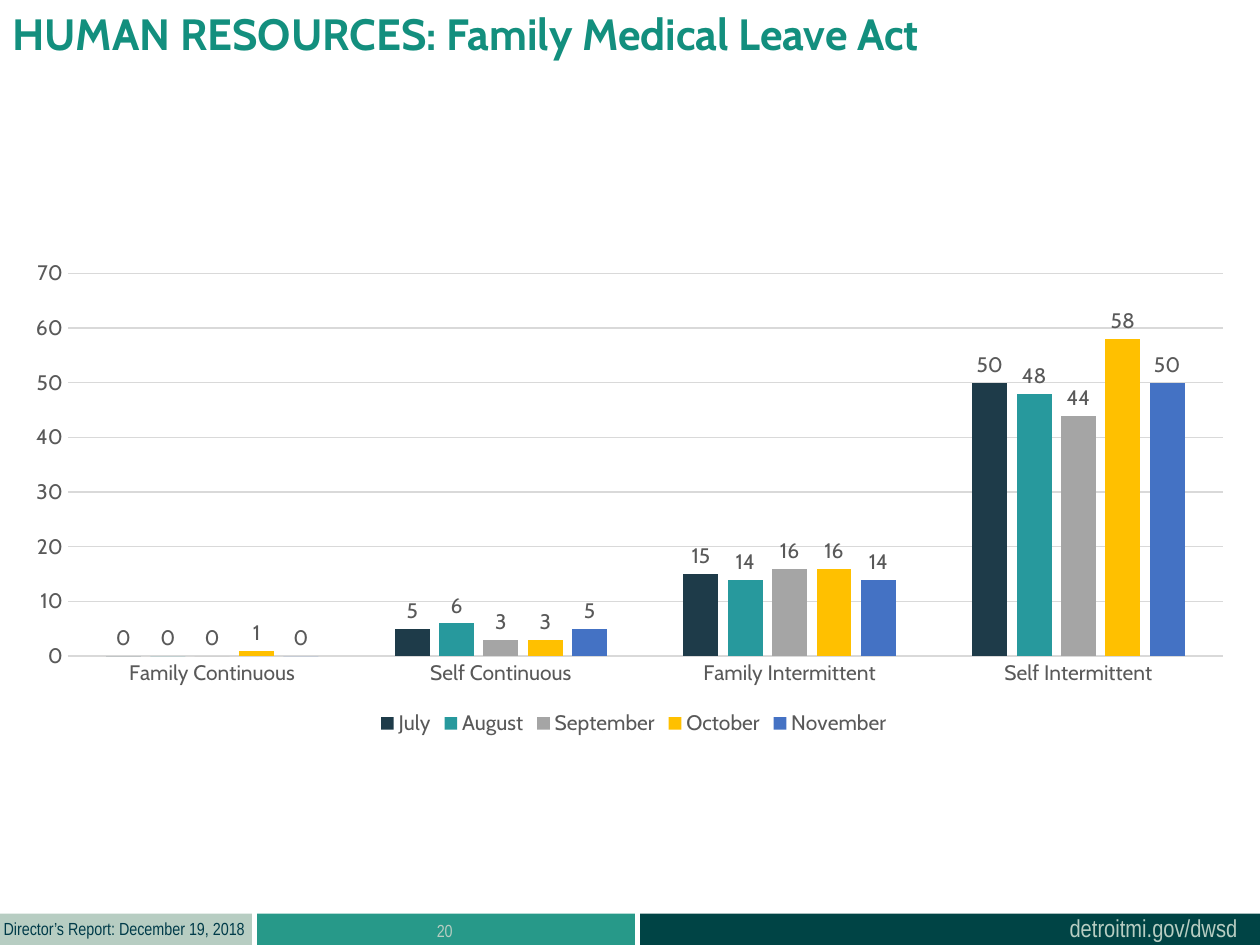
import pptx
import pptx.chart.data
import pptx.dml.color
import pptx.enum.chart
import pptx.enum.shapes
import pptx.enum.text
import pptx.oxml
import pptx.oxml.ns
import pptx.util

WIDTH, HEIGHT = 10, 7.5
HEADING = "HUMAN RESOURCES: Family Medical Leave Act"
LEAVE_TYPES = ["Family Continuous", "Self Continuous", "Family Intermittent", "Self Intermittent"]
MONTHS = [  # name, cases by leave type, colour
    ("July", (0, 5, 15, 50), "1E3B49"),
    ("August", (0, 6, 14, 48), "27999D"),
    ("September", (0, 3, 16, 44), "A5A5A5"),
    ("October", (1, 3, 16, 58), "FFC000"),
    ("November", (0, 5, 14, 50), "4472C4"),
]
BAND_HEIGHT = HEIGHT / 30
BAND_TOP = HEIGHT - BAND_HEIGHT
FOOTER_BANDS = [(0, 2, "B7CDC2"), (2.04, 3, "279989"), (5.08, WIDTH - 5.08, "004445")]
FOOTER_TEXTS = [  # text, place, format
    ("Director’s Report: December 19, 2018", (-0.07, 7.24, 2.19, 0.27),
     dict(size=10, color="003B49")),
    ("20", (2.03, BAND_TOP, 3, 0.25),
     dict(size=10, color="B7CDC2", align=pptx.enum.text.PP_ALIGN.CENTER)),
    ("detroitmi.gov/dwsd", (8.39, 7.2, 1.55, 0.34),
     dict(size=14, color="B7CDC2", wrap=False)),
]
PLOT_AREA = {"x": 0.035, "y": 0.039, "w": 0.949, "h": 0.787}  # shares of the chart


def rgb(color):
    return pptx.dml.color.RGBColor.from_string(color)


def inches(*lengths):
    return [pptx.util.Inches(length) for length in lengths]


def style_font(font, size, color, name, bold=False):
    font.size = pptx.util.Pt(size)
    font.color.rgb = rgb(color)
    font.name = name
    font.bold = bold


def write(box, text, size, color, font="Arial Narrow", bold=False,
          align=pptx.enum.text.PP_ALIGN.LEFT, wrap=True):
    frame = box.text_frame
    frame.text = text
    frame.word_wrap = wrap
    frame.auto_size = pptx.enum.text.MSO_AUTO_SIZE.NONE
    frame.vertical_anchor = pptx.enum.text.MSO_ANCHOR.TOP
    frame.paragraphs[0].alignment = align
    style_font(frame.paragraphs[0].runs[0].font, size, color, font, bold)


def style_chart_text(font):
    style_font(font, 12, "595959", "Cabin")


def style_line(line, color="D9D9D9"):
    line.color.rgb = rgb(color)
    line.width = pptx.util.Pt(0.75)


def add_footer(slide):
    for left, width, color in FOOTER_BANDS:
        band = slide.shapes.add_shape(pptx.enum.shapes.MSO_SHAPE.RECTANGLE,
                                      *inches(left, BAND_TOP, width, BAND_HEIGHT))
        band.shadow.inherit = False
        band.fill.solid()
        band.fill.fore_color.rgb = rgb(color)
        band.line.fill.background()
    for text, place, style in FOOTER_TEXTS:
        write(slide.shapes.add_textbox(*inches(*place)), text, **style)


def place_plot(chart):
    plot_area = chart.plots[0]._element.getparent()
    for old in plot_area.findall(pptx.oxml.ns.qn("c:layout")):
        plot_area.remove(old)
    modes = "".join(f'<c:{side}Mode val="edge"/>' for side in "xy")
    shares = "".join(f'<c:{side} val="{share}"/>' for side, share in PLOT_AREA.items())
    plot_area.insert(0, pptx.oxml.parse_xml(
        f'<c:layout {pptx.oxml.ns.nsdecls("c")}><c:manualLayout>'
        f'<c:layoutTarget val="inner"/>{modes}{shares}</c:manualLayout></c:layout>'))


def add_leave_chart(slide):
    data = pptx.chart.data.CategoryChartData()
    data.categories = LEAVE_TYPES
    for month, cases, _ in MONTHS:
        data.add_series(month, cases)
    chart = slide.shapes.add_chart(pptx.enum.chart.XL_CHART_TYPE.COLUMN_CLUSTERED,
                                   *inches(0.2, 2.02, 9.66, 3.86), data).chart
    style_chart_text(chart.font)
    chart.has_title = False
    chart.has_legend = True
    chart.legend.position = pptx.enum.chart.XL_LEGEND_POSITION.BOTTOM
    chart.legend.include_in_layout = False
    style_chart_text(chart.legend.font)

    # Columns and their values
    columns = chart.plots[0]
    columns.gap_width, columns.overlap = 219, -27
    columns.vary_by_categories = False
    for series, (_, _, color) in zip(columns.series, MONTHS):
        series.format.fill.solid()
        series.format.fill.fore_color.rgb = rgb(color)
        series.invert_if_negative = False
        labels = series.data_labels
        labels.show_value = True
        labels.position = pptx.enum.chart.XL_LABEL_POSITION.OUTSIDE_END
        style_chart_text(labels.font)

    # Axes
    for axis in (chart.category_axis, chart.value_axis):
        axis.major_tick_mark = axis.minor_tick_mark = pptx.enum.chart.XL_TICK_MARK.NONE
        style_chart_text(axis.tick_labels.font)
    style_line(chart.category_axis.format.line)
    cases_axis = chart.value_axis
    cases_axis.minimum_scale, cases_axis.maximum_scale, cases_axis.major_unit = 0, 70, 10
    cases_axis.format.line.fill.background()
    style_line(cases_axis.major_gridlines.format.line)
    place_plot(chart)


def main():
    deck = pptx.Presentation()
    deck.slide_width, deck.slide_height = inches(WIDTH, HEIGHT)
    slide = deck.slides.add_slide(deck.slide_layouts.get_by_name("Title Only"))
    add_footer(slide)
    heading = slide.shapes.title
    heading.left, heading.top, heading.width, heading.height = inches(0, 0, 7.59, 0.77)
    write(heading, HEADING, size=25, color="138F7E", font="Cabin", bold=True)
    add_leave_chart(slide)
    deck.save("out.pptx")


if __name__ == "__main__":
    main()
